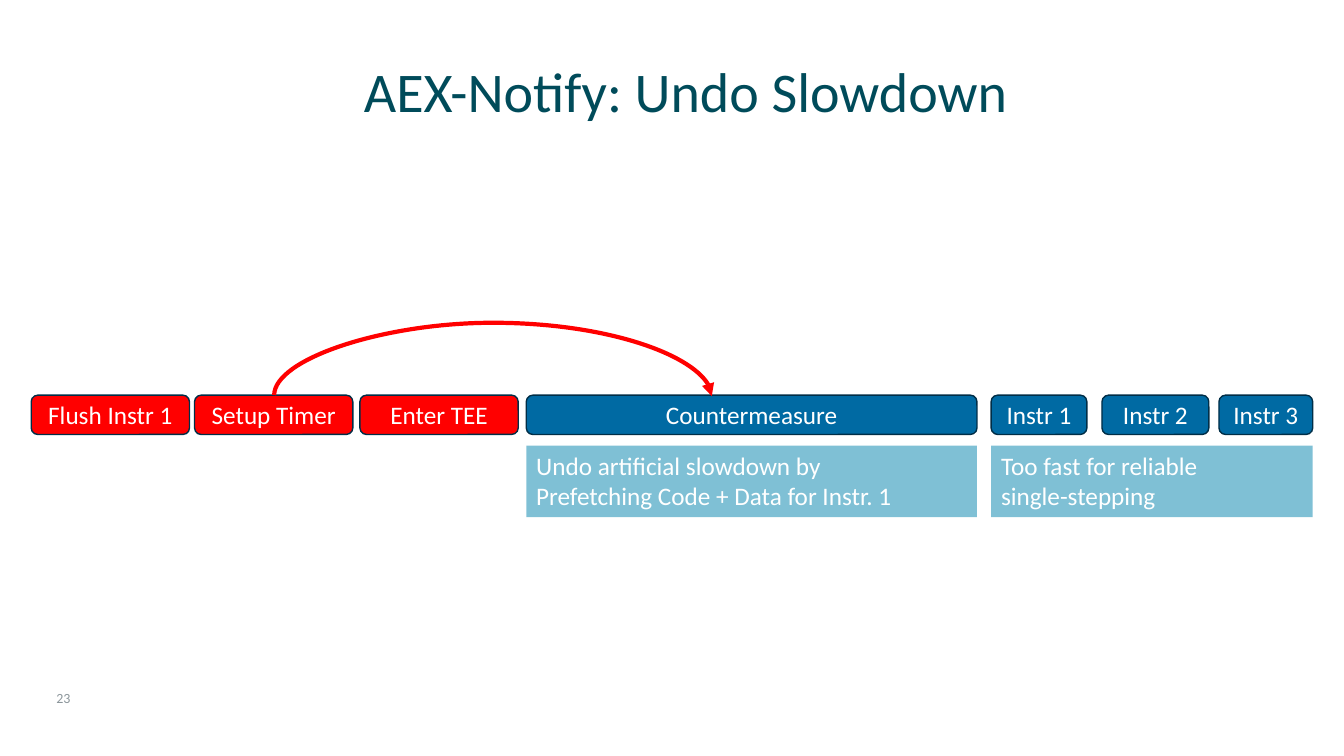
from dataclasses import dataclass

from lxml import etree
from pptx import Presentation
from pptx.dml.color import RGBColor
from pptx.enum.shapes import MSO_CONNECTOR, MSO_SHAPE
from pptx.enum.text import MSO_ANCHOR, MSO_AUTO_SIZE, PP_ALIGN
from pptx.oxml.ns import qn
from pptx.util import Pt

RECT, ROUNDED = MSO_SHAPE.RECTANGLE, MSO_SHAPE.ROUNDED_RECTANGLE
CURVE = MSO_CONNECTOR.CURVE
MIDDLE, TOP = MSO_ANCHOR.MIDDLE, MSO_ANCHOR.TOP
LEFT, CENTER = PP_ALIGN.LEFT, PP_ALIGN.CENTER
NO_FIT, GROW = MSO_AUTO_SIZE.NONE, MSO_AUTO_SIZE.SHAPE_TO_FIT_TEXT

PX = 9144  # 100 px to the inch
TITLE_ONLY = 5


@dataclass(frozen=True)
class Theme:
    font: str = "Calibri"
    title_size: int = 40
    body_size: int = 18
    number_size: int = 10
    title: str = "004B5A"
    number: str = "8C969B"
    text: str = "FFFFFF"
    attacker: str = "FF0000"
    enclave: str = "006AA3"
    outline: str = "002E47"
    note: str = "0083AD"
    note_opacity: int = 50


THEME = Theme()

# label, offset from the left end of the timeline, width, colour
STEPS = [
    ("Flush Instr 1", 0, 157, THEME.attacker),
    ("Setup Timer", 162, 157, THEME.attacker),
    ("Enter TEE", 326, 157, THEME.attacker),
    ("Countermeasure", 491, 447, THEME.enclave),
    ("Instr 1", 952, 95, THEME.enclave),
    ("Instr 2", 1062, 106, THEME.enclave),
    ("Instr 3", 1178, 93, THEME.enclave),
]
# text, offset, width
NOTES = [
    ("Undo artificial slowdown by\vPrefetching Code + Data for Instr. 1", 491, 447),
    ("Too fast for reliable\vsingle-stepping", 952, 319),
]


def emu(*lengths):
    return [round(length * PX) for length in lengths]


def rgb(value):
    return RGBColor.from_string(value)


def write(shape, text, size, color, align=LEFT, anchor=MIDDLE, fit=NO_FIT):
    frame = shape.text_frame
    frame.text = text
    frame.word_wrap = True
    frame.auto_size = fit
    frame.vertical_anchor = anchor
    paragraph = frame.paragraphs[0]
    paragraph.alignment = align
    for run in paragraph.runs:
        run.font.name = THEME.font
        run.font.size = Pt(size)
        run.font.color.rgb = rgb(color)
    return paragraph


def add_block(slide, kind, box, color):
    block = slide.shapes.add_shape(kind, *emu(*box))
    block.shadow.inherit = False
    block.fill.solid()
    block.fill.fore_color.rgb = rgb(color)
    return block


def add_title(slide, box, text):
    title = slide.shapes.title
    title.left, title.top, title.width, title.height = emu(*box)
    write(title, text, THEME.title_size, THEME.title).line_spacing = 0.9


def add_page_number(slide, box, number):
    page_number = slide.shapes.add_textbox(*emu(*box))
    write(page_number, number, THEME.number_size, THEME.number)


def add_steps(slide, left, top, height):
    for label, offset, width, color in STEPS:
        step = add_block(slide, ROUNDED, (left + offset, top, width, height), color)
        step.line.color.rgb = rgb(THEME.outline)
        step.line.width = Pt(1)
        write(step, label, THEME.body_size, THEME.text, CENTER)


def add_notes(slide, left, top, height):
    for text, offset, width in NOTES:
        note = add_block(slide, RECT, (left + offset, top, width, height), THEME.note)
        note.line.fill.background()
        fill_color = note._element.spPr.find(qn("a:solidFill"))[0]
        alpha = etree.SubElement(fill_color, qn("a:alpha"))
        alpha.set("val", str(THEME.note_opacity * 1000))
        write(note, text, THEME.body_size, THEME.text, anchor=TOP, fit=GROW)


def add_timer_arc(slide, left, top, span, rise):
    """Curved arrow bulging upwards: a one px wide S-curve on its side."""
    arc = slide.shapes.add_connector(CURVE, 0, 0, 0, 0)
    arc.left, arc.top, arc.width, arc.height = emu(
        left + (span - 1) / 2, top + (1 - span) / 2, 1, span)
    arc.line.color.rgb = rgb(THEME.attacker)
    arc.line.width = Pt(3)
    properties = arc._element.spPr
    frame = properties.find(qn("a:xfrm"))
    frame.set("rot", str(270 * 60000))
    frame.set("flipH", "1")
    geometry = properties.find(qn("a:prstGeom"))
    adjustments = geometry.find(qn("a:avLst"))
    if adjustments is None:
        adjustments = etree.SubElement(geometry, qn("a:avLst"))
    bulge = etree.SubElement(adjustments, qn("a:gd"))
    bulge.set("name", "adj1")
    bulge.set("fmla", f"val {-rise * 100000}")
    line = properties.find(qn("a:ln"))
    etree.SubElement(line, qn("a:tailEnd")).set("type", "triangle")
    etree.SubElement(properties, qn("a:effectLst"))


def add_timeline(slide, left, top):
    add_steps(slide, left, top, 39)
    add_notes(slide, left, top + 50, 71)
    add_timer_arc(slide, left + 241, top, 434, 73)


def main():
    deck = Presentation()
    deck.slide_width, deck.slide_height = emu(1333, 750)
    slide = deck.slides.add_slide(deck.slide_layouts[TITLE_ONLY])
    add_title(slide, (351, 45, 889, 98), "AEX-Notify: Undo Slowdown")
    add_page_number(slide, (46, 680, 49, 25), "23")
    add_timeline(slide, 31, 392)
    deck.save("out.pptx")


if __name__ == "__main__":
    main()
